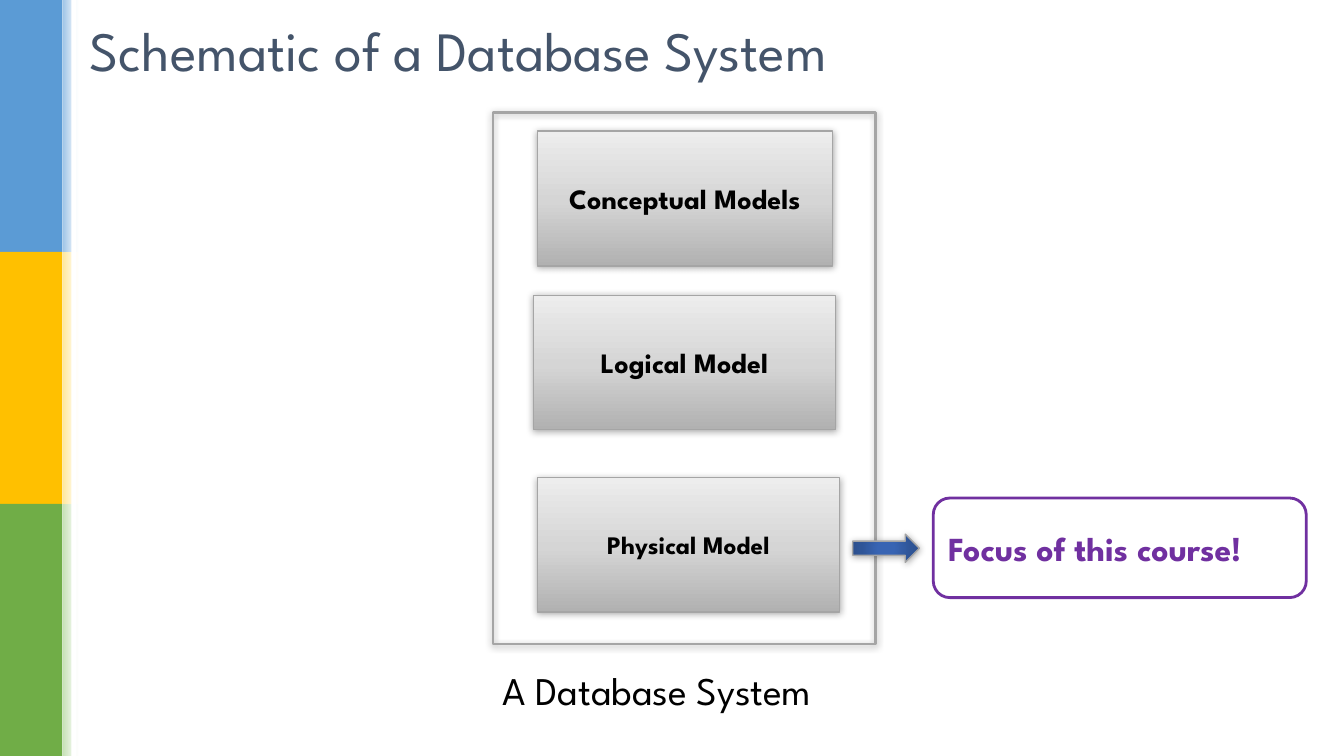
from dataclasses import dataclass

from lxml.etree import SubElement
from pptx import Presentation
from pptx.dml.color import RGBColor
from pptx.enum.shapes import MSO_SHAPE as Shape
from pptx.enum.text import MSO_ANCHOR as Anchor, PP_ALIGN as Align
from pptx.oxml.ns import qn
from pptx.util import Cm, Pt


@dataclass(frozen=True)
class Theme:
    font: str = "League Spartan"
    title: str = "44546A"
    text: str = "000000"
    accent: str = "7030A0"
    outline: str = "A5A5A5"
    white: str = "FFFFFF"
    bands: tuple = (("5B9BD5", "9DC3E6"), ("FFC000", "FFE699"), ("70AD47", "C5E0B4"))
    grey: tuple = ((0, "B1B1B1"), (48, "D5D5D5"), (100, "EDEDED"))
    blue: tuple = ((0, "3864B3"), (23, "3864B3"), (69, "2F5597"), (97, "2C4F8C"))
    title_size: float = 39.6
    caption_size: int = 28
    focus_size: int = 24
    model_size: int = 20
    small_model_size: int = 18


THEME = Theme()


def set_gradient(shape, stops, angle=None):
    """Fill with (percent, colour) stops; without an angle the gradient is radial."""
    shape.fill.gradient()
    gradient = shape._element.spPr.find(qn("a:gradFill"))
    for child in list(gradient):
        gradient.remove(child)
    stop_list = SubElement(gradient, qn("a:gsLst"))
    for percent, colour in stops:
        stop = SubElement(stop_list, qn("a:gs"), pos=str(percent * 1000))
        SubElement(stop, qn("a:srgbClr"), val=colour)
    if angle is None:
        radial = SubElement(gradient, qn("a:path"), {"path": "circle"})
        SubElement(radial, qn("a:fillToRect"), dict.fromkeys("ltrb", "50000"))
    else:
        SubElement(gradient, qn("a:lin"), ang=str(angle * 60000), scaled="0")


def add_soft_shadow(shape):
    effects = shape._element.spPr.find(qn("a:effectLst"))
    shadow = SubElement(effects, qn("a:outerShdw"), blurRad=str(Pt(5)), dist=str(Pt(1)),
                        dir="5400000", algn="ctr", rotWithShape="0")
    colour = SubElement(shadow, qn("a:srgbClr"), val=THEME.text)
    SubElement(colour, qn("a:alpha"), val="32000")


def add_box(slide, kind, box, fill=None, line=None, line_width=1.0):
    shape = slide.shapes.add_shape(kind, *map(Cm, box))
    shape.shadow.inherit = False
    if fill:
        shape.fill.solid()
        shape.fill.fore_color.rgb = RGBColor.from_string(fill)
    else:
        shape.fill.background()
    if line:
        shape.line.color.rgb = RGBColor.from_string(line)
        shape.line.width = Pt(line_width)
    else:
        shape.line.fill.background()
    return shape


def set_text(shape, text, size, colour, bold=False, align=Align.LEFT, anchor=Anchor.MIDDLE):
    text_frame = shape.text_frame
    text_frame.text = text
    text_frame.word_wrap = True
    text_frame.vertical_anchor = anchor
    paragraph = text_frame.paragraphs[0]
    paragraph.alignment = align
    font = paragraph.runs[0].font
    font.name, font.size, font.bold = THEME.font, Pt(size), bold
    font.color.rgb = RGBColor.from_string(colour)
    return paragraph


def add_side_bands(slide):
    height = 6.35
    for index, (colour, tint) in enumerate(THEME.bands):
        top = index * height
        add_box(slide, Shape.RECTANGLE, (0, top, 1.57, height), fill=colour)
        fade = add_box(slide, Shape.RECTANGLE, (1.57, top, 0.41, height))
        set_gradient(fade, ((0, tint), (100, THEME.white)), angle=0)
    add_box(slide, Shape.RECTANGLE, (1.8, 0, 0.13, 3 * height), fill=THEME.white)


def add_title(slide, text):
    title = slide.shapes.title
    title.left, title.top, title.width, title.height = map(Cm, (2.01, 0.23, 30.48, 2.03))
    set_text(title, text, THEME.title_size, THEME.title)


def add_model(slide, text, box, size):
    model = add_box(slide, Shape.RECTANGLE, box, line=THEME.outline)
    set_gradient(model, THEME.grey, angle=270)
    add_soft_shadow(model)
    set_text(model, text, size, THEME.text, bold=True, align=Align.CENTER)


def add_caption(slide, text):
    caption = slide.shapes.add_textbox(*map(Cm, (12.42, 16.81, 10.11, 1.45)))
    paragraph = set_text(caption, text, THEME.caption_size, THEME.text, anchor=Anchor.TOP)
    paragraph.line_spacing = 0.9


def add_focus(slide, text):
    focus = add_box(slide, Shape.ROUNDED_RECTANGLE, (23.52, 12.55, 9.4, 2.51),
                    line=THEME.accent, line_width=2)
    set_text(focus, text, THEME.focus_size, THEME.accent, bold=True)
    arrow = add_box(slide, Shape.RIGHT_ARROW, (21.49, 13.46, 1.68, 0.71), line=THEME.outline)
    set_gradient(arrow, THEME.blue)
    add_soft_shadow(arrow)


def main():
    presentation = Presentation()
    presentation.slide_width, presentation.slide_height = Cm(33.87), Cm(19.05)
    slide = presentation.slides.add_slide(presentation.slide_layouts[5])

    # Side decoration and heading
    add_side_bands(slide)
    add_title(slide, "Schematic of a Database System")

    # The database system and its three models
    frame = add_box(slide, Shape.RECTANGLE, (12.42, 2.84, 9.65, 13.39),
                    line=THEME.outline, line_width=1.75)
    add_soft_shadow(frame)
    add_model(slide, "Conceptual Models", (13.54, 3.3, 7.44, 3.4), THEME.model_size)
    add_model(slide, "Logical Model", (13.44, 7.44, 7.62, 3.38), THEME.model_size)
    add_model(slide, "Physical Model", (13.54, 12.04, 7.62, 3.38), THEME.small_model_size)
    add_caption(slide, "A Database System")

    # Pointer to the course topic
    add_focus(slide, "Focus of this course!")

    presentation.save("out.pptx")


if __name__ == "__main__":
    main()
